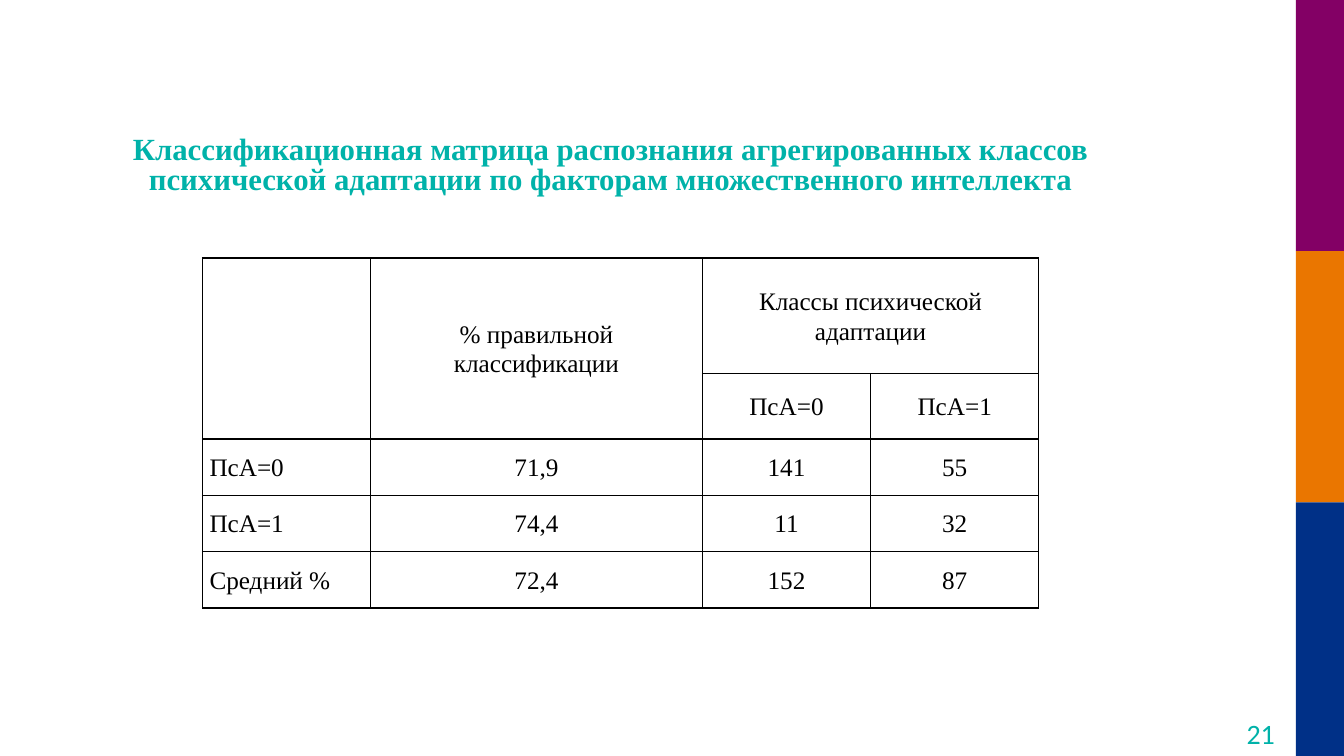
from dataclasses import dataclass

from lxml import etree
from pptx import Presentation
from pptx.dml.color import RGBColor
from pptx.enum.shapes import MSO_SHAPE
from pptx.enum.text import MSO_ANCHOR, MSO_AUTO_SIZE, PP_ALIGN
from pptx.oxml.ns import qn
from pptx.util import Cm, Pt

RECT = MSO_SHAPE.RECTANGLE
MIDDLE = MSO_ANCHOR.MIDDLE
GROW = MSO_AUTO_SIZE.SHAPE_TO_FIT_TEXT
LEFT, CENTER, RIGHT = PP_ALIGN.LEFT, PP_ALIGN.CENTER, PP_ALIGN.RIGHT

PLUM = RGBColor(0x83, 0x00, 0x65)
ORANGE = RGBColor(0xEA, 0x76, 0x00)
NAVY = RGBColor(0x00, 0x30, 0x87)
TEAL = RGBColor(0x00, 0xB2, 0xA9)
BLACK = RGBColor(0, 0, 0)
WHITE = RGBColor(0xFF, 0xFF, 0xFF)
SERIF, SANS = "Times New Roman", "Calibri"

WIDE, HIGH = 33.87, 19.05
BAR_X, BAR_H = 32.66, 6.33


@dataclass
class Bar:
    top: float
    height: float
    color: RGBColor


@dataclass
class Style:
    font: str
    size: float
    color: RGBColor
    align: PP_ALIGN
    space: float = 1.0
    bold: bool = False


HEAD = Style(SERIF, 22, TEAL, CENTER, 0.8, True)
PAGE = Style(SANS, 20, TEAL, RIGHT)
LABEL = Style(SERIF, 18, BLACK, LEFT, 1.07)
VALUE = Style(SERIF, 18, BLACK, CENTER, 1.07)

BARS = [
    Bar(0, BAR_H, PLUM),
    Bar(BAR_H, BAR_H, ORANGE),
    Bar(2 * BAR_H, HIGH - 2 * BAR_H, NAVY),
]
COLS = [4.24, 8.36, 4.24, 4.24]
ROWS = [2.92, 1.64, 1.42, 1.42, 1.42]
CELLS = [
    ["", "% правильной\nклассификации", "Классы психической адаптации", ""],
    ["", "", "ПсА=0", "ПсА=1"],
    ["ПсА=0", "71,9", "141", "55"],
    ["ПсА=1", "74,4", "11", "32"],
    ["Средний %", "72,4", "152", "87"],
]
SPANS = [((0, 0), (1, 0)), ((0, 1), (1, 1)), ((0, 2), (0, 3))]


def write(frame, text: str, style: Style) -> None:
    for i, line in enumerate(text.split("\n")):
        para = frame.add_paragraph() if i else frame.paragraphs[0]
        para.alignment = style.align
        para.line_spacing = style.space
        para.space_before = para.space_after = Pt(0)
        run = para.add_run()
        run.text = line
        run.font.name = style.font
        run.font.size = Pt(style.size)
        run.font.bold = style.bold
        run.font.color.rgb = style.color


def add_bar(slide, bar: Bar) -> None:
    shape = slide.shapes.add_shape(
        RECT, Cm(BAR_X), Cm(bar.top), Cm(WIDE - BAR_X), Cm(bar.height))
    shape.shadow.inherit = False
    shape.fill.solid()
    shape.fill.fore_color.rgb = bar.color
    shape.line.fill.background()


def add_edges(cell) -> None:
    props = cell._tc.get_or_add_tcPr()
    for side in ("lnL", "lnR", "lnT", "lnB"):
        line = etree.SubElement(props, qn(f"a:{side}"), w=str(Pt(1)))
        fill = etree.SubElement(line, qn("a:solidFill"))
        etree.SubElement(fill, qn("a:srgbClr"), val=str(BLACK))


def add_grid(slide) -> None:
    table = slide.shapes.add_table(
        len(ROWS), len(COLS), Cm(5.1), Cm(6.5),
        Cm(sum(COLS)), Cm(sum(ROWS))).table
    table.first_row = table.horz_banding = False
    for col, width in zip(table.columns, COLS):
        col.width = Cm(width)
    for row, height in zip(table.rows, ROWS):
        row.height = Cm(height)
    for r, texts in enumerate(CELLS):
        for c, text in enumerate(texts):
            cell = table.cell(r, c)
            add_edges(cell)
            cell.vertical_anchor = MIDDLE
            cell.margin_left = cell.margin_right = Cm(0.18)
            cell.margin_top = cell.margin_bottom = 0
            if r == 0 or not text:
                cell.fill.background()
            else:
                cell.fill.solid()
                cell.fill.fore_color.rgb = WHITE
            if text:
                write(cell.text_frame, text, VALUE if c else LABEL)
    for start, end in SPANS:
        table.cell(*start).merge(table.cell(*end))


def main() -> None:
    deck = Presentation()
    deck.slide_width, deck.slide_height = Cm(WIDE), Cm(HIGH)
    slide = deck.slides.add_slide(deck.slide_layouts[5])

    # Colour bars at the right edge
    for bar in BARS:
        add_bar(slide, bar)

    # Page number
    page = slide.shapes.add_textbox(Cm(30.63), Cm(18.14), Cm(1.5), Cm(0.69))
    frame = page.text_frame
    frame.word_wrap = True
    frame.vertical_anchor = MIDDLE
    frame.margin_left = frame.margin_right = 0
    frame.margin_top = frame.margin_bottom = 0
    write(frame, "21", PAGE)

    # Title
    title = slide.shapes.title
    title.left, title.top = Cm(1.5), Cm(3.33)
    title.width, title.height = Cm(27.76), Cm(1.75)
    title.text_frame.word_wrap = True
    title.text_frame.auto_size = GROW
    title.text_frame.vertical_anchor = MIDDLE
    write(title.text_frame,
          "Классификационная матрица распознания агрегированных классов "
          "психической адаптации по факторам множественного интеллекта", HEAD)

    # Classification matrix
    add_grid(slide)
    deck.save("out.pptx")


if __name__ == "__main__":
    main()
